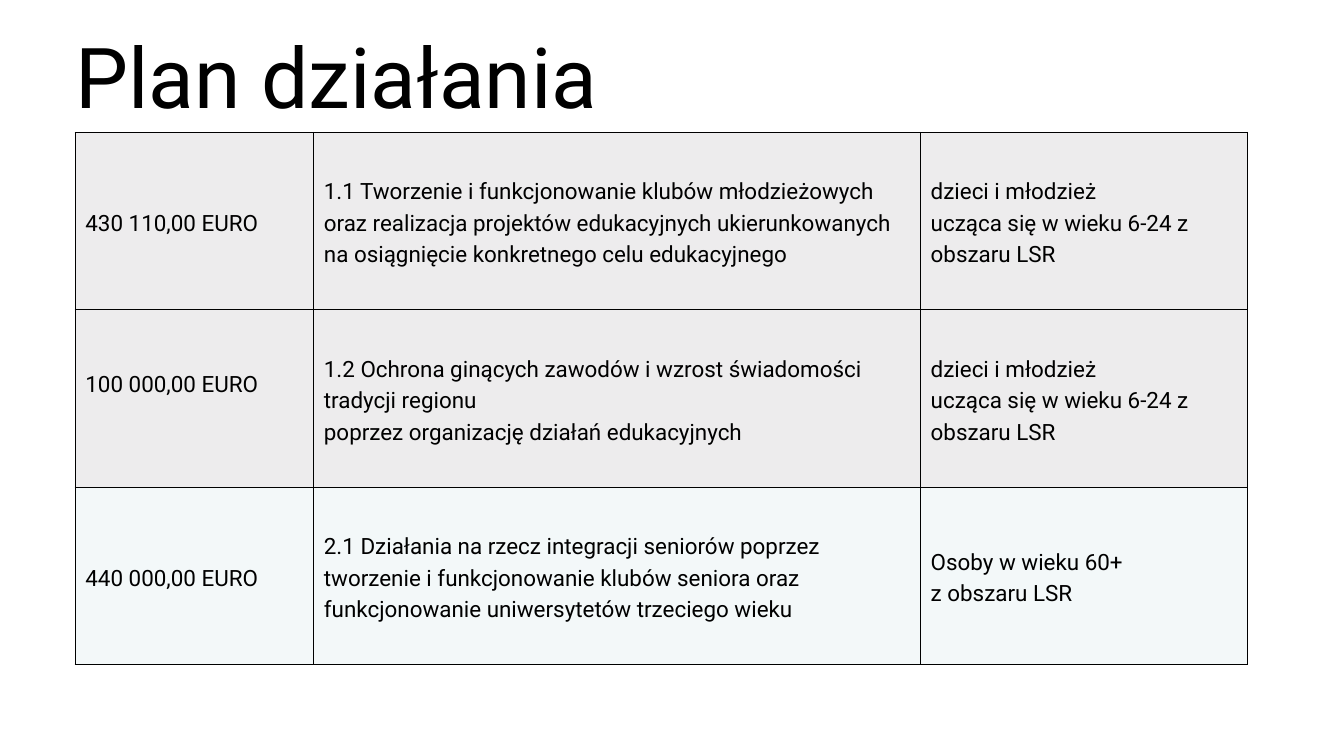
from lxml.etree import SubElement
from pptx import Presentation
from pptx.dml.color import RGBColor
from pptx.enum.text import MSO_ANCHOR, MSO_AUTO_SIZE, PP_ALIGN
from pptx.oxml.ns import qn
from pptx.util import Pt

PX = 9144
FONT = "Roboto"
COLORS = {"text": "000000", "border": "000000", "youth": "EDECED", "senior": "F3F8F9"}
COLUMNS = [355, 903, 487]
MARGIN = 15
LINE = 33.6
LIFT = 47
YOUTH = ["dzieci i młodzież", "ucząca się w wieku 6-24 z obszaru LSR"]
ROWS = [
    ("youth", 0, [
        ["430 110,00 EURO"],
        ["1.1 Tworzenie i funkcjonowanie klubów młodzieżowych",
         "oraz realizacja projektów edukacyjnych ukierunkowanych "
         "na osiągnięcie konkretnego celu edukacyjnego"],
        YOUTH]),
    ("youth", LIFT, [
        ["100 000,00 EURO"],
        ["1.2 Ochrona ginących zawodów i wzrost świadomości tradycji regionu",
         "poprzez organizację działań edukacyjnych"],
        YOUTH]),
    ("senior", 0, [
        ["440 000,00 EURO"],
        ["2.1 Działania na rzecz integracji seniorów poprzez",
         "tworzenie i funkcjonowanie klubów seniora oraz "
         "funkcjonowanie uniwersytetów trzeciego wieku"],
        ["Osoby w wieku 60+", "z obszaru LSR"]]),
]


def px(n):
    """Turn px into EMU."""
    return n * PX


def write(tf, lines, size, spacing):
    """Write one left-aligned paragraph per line."""
    for i, line in enumerate(lines):
        p = tf.add_paragraph() if i else tf.paragraphs[0]
        p.alignment = PP_ALIGN.LEFT
        p.line_spacing = Pt(spacing)
        p.space_before = Pt(0)
        r = p.add_run()
        r.text = line
        r.font.name = FONT
        r.font.size = Pt(size)
        r.font.color.rgb = RGBColor.from_string(COLORS["text"])


def add_borders(cell):
    """Draw a thin line on every side of a cell."""
    tc_pr = cell._tc.get_or_add_tcPr()
    for i, side in enumerate(("lnL", "lnR", "lnT", "lnB")):
        ln = SubElement(tc_pr, qn(f"a:{side}"), w=str(Pt(1.5)))
        fill = SubElement(ln, qn("a:solidFill"))
        SubElement(fill, qn("a:srgbClr"), val=COLORS["border"])
        tc_pr.insert(i, ln)


def add_title(s, x, y, w, h):
    """Place and format the slide title."""
    sp = s.shapes.title
    sp.left, sp.top, sp.width, sp.height = px(x), px(y), px(w), px(h)
    tf = sp.text_frame
    tf.margin_left = tf.margin_right = tf.margin_top = tf.margin_bottom = 0
    tf.auto_size = MSO_AUTO_SIZE.NONE
    tf.vertical_anchor = MSO_ANCHOR.TOP
    tf.word_wrap = True
    write(tf, ["Plan działania"], 90, 108)


def add_plan(s, x, y, w, h):
    """Place the table of budgets, actions and target groups."""
    table = s.shapes.add_table(len(ROWS), len(COLUMNS), px(x), px(y), px(w), px(h)).table
    table.first_row = table.horz_banding = False
    for column, width in zip(table.columns, COLUMNS):
        column.width = px(width)
    for row, (color, lift, texts) in zip(table.rows, ROWS):
        row.height = px(h // len(ROWS))
        for i, (cell, lines) in enumerate(zip(row.cells, texts)):
            cell.margin_left = cell.margin_right = cell.margin_top = px(MARGIN)
            cell.margin_bottom = px(MARGIN + (0 if i else lift))
            cell.vertical_anchor = MSO_ANCHOR.MIDDLE
            cell.fill.solid()
            cell.fill.fore_color.rgb = RGBColor.from_string(COLORS[color])
            add_borders(cell)
            write(cell.text_frame, lines, 24, LINE)


def main():
    """Build the slide and save it."""
    prs = Presentation()
    prs.slide_width, prs.slide_height = px(2000), px(1125)
    s = prs.slides.add_slide(prs.slide_layouts[5])
    add_title(s, 112, 36, 872, 151)
    add_plan(s, 112, 197, sum(COLUMNS), 792)
    prs.save("out.pptx")


if __name__ == "__main__":
    main()
